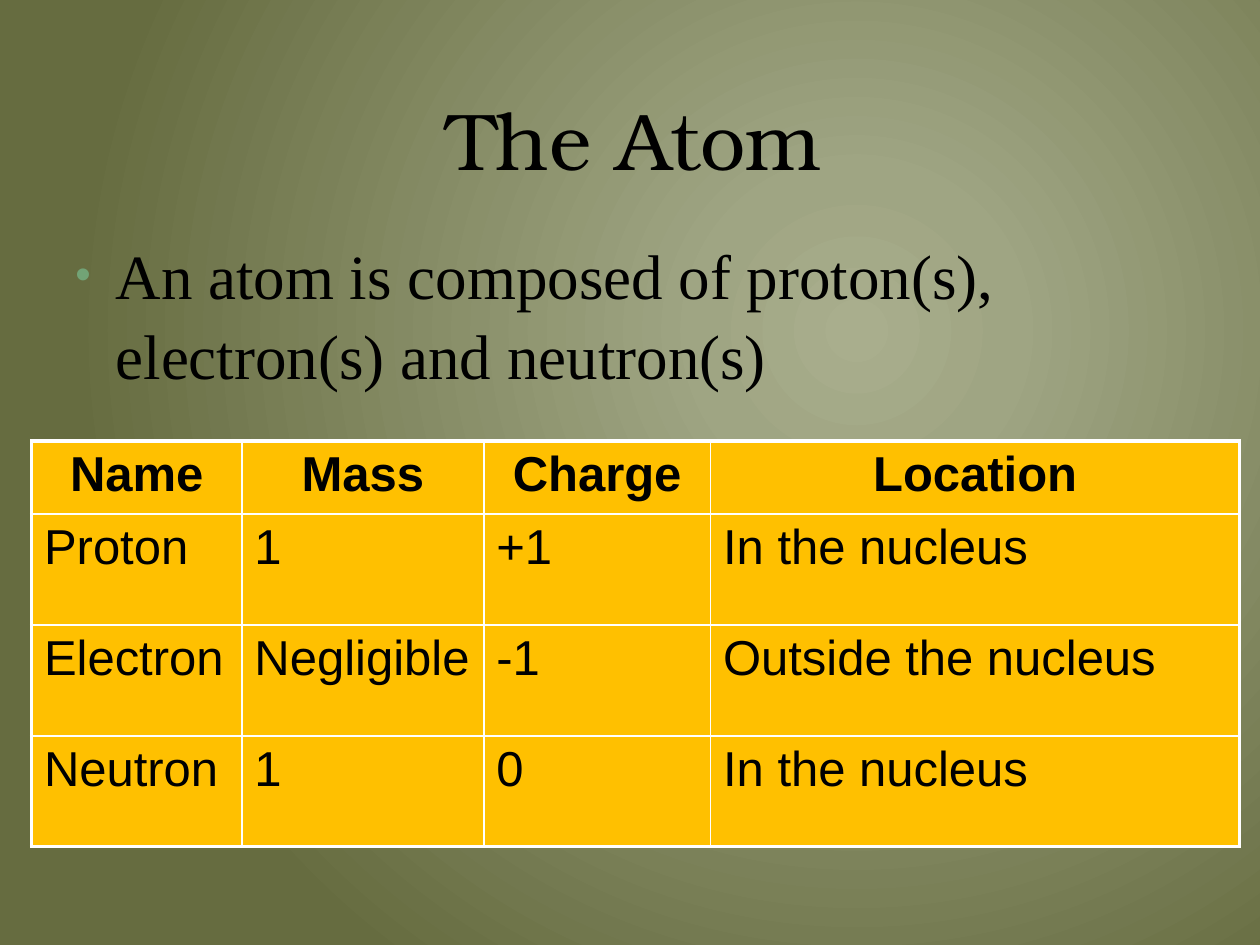
import pptx
import pptx.dml.color
import pptx.enum.text
import pptx.oxml
import pptx.oxml.ns
import pptx.util
from dataclasses import dataclass
from lxml import etree

A = pptx.oxml.ns.nsdecls("a")
ALIGN = pptx.enum.text.PP_ALIGN
ANCHOR = pptx.enum.text.MSO_ANCHOR


@dataclass(frozen=True)
class Theme:
    ink: str = "000000"
    bullet: str = "72A376"
    cell: str = "FFC000"
    rule: str = "FFFFFF"
    backdrop: tuple = ((0, "A9AE8D"), (20, "9FA583"), (100, "666C40"))
    focus: tuple = (("l", 68), ("t", 35), ("r", 32), ("b", 65))
    title: tuple = ("TeX Gyre Bonum", 46)
    body: tuple = ("Times New Roman", 36)
    table: tuple = ("Arial", 28)
    outer: float = 2.25
    inner: float = 1


T = Theme()
WIDTH, HEIGHT = 10, 7.5
TITLE_BOX = (0.5, 0.28, 9, 1.25)
BODY_BOX = (0.5, 1.8, 9, 1.5)
TABLE_BOX = (0.25, 3.5, 9.59, 3.22)
COLUMNS = (1.67, 1.92, 1.8, 4.2)
ROWS = (0.58, 0.88, 0.88, 0.88)
PARTICLES = (
    ("Name", "Mass", "Charge", "Location"),
    ("Proton", "1", "+1", "In the nucleus"),
    ("Electron", "Negligible", "-1", "Outside the nucleus"),
    ("Neutron", "1", "0", "In the nucleus"),
)


def inches(values):
    return [pptx.util.Inches(v) for v in values]


def rgb(value):
    return pptx.dml.color.RGBColor.from_string(value)


def set_all(obj, formats):
    for name, value in formats.items():
        setattr(obj, name, value)


def write(tf, text, font, align=ALIGN.LEFT, bold=False):
    p = tf.paragraphs[0]
    p.alignment = align
    r = p.add_run()
    r.text = text
    name, size = font
    set_all(r.font, {"name": name, "size": pptx.util.Pt(size), "bold": bold})
    r.font.color.rgb = rgb(T.ink)
    return p


def add_text(s, box, text, font, align, anchor):
    tf = s.shapes.add_textbox(*inches(box)).text_frame
    set_all(tf, {"word_wrap": True, "vertical_anchor": anchor})
    return write(tf, text, font, align)


def add_background(s):
    stops = "".join(f'<a:gs pos="{pos * 1000}"><a:srgbClr val="{c}"/></a:gs>'
                    for pos, c in T.backdrop)
    focus = " ".join(f'{side}="{share * 1000}"' for side, share in T.focus)
    s.background.fill.solid()
    bg_pr = s.element.cSld.find(".//" + pptx.oxml.ns.qn("p:bgPr"))
    bg_pr.replace(bg_pr[0], pptx.oxml.parse_xml(
        f'<a:gradFill {A} rotWithShape="1"><a:gsLst>{stops}</a:gsLst>'
        f'<a:path path="circle"><a:fillToRect {focus}/></a:path></a:gradFill>'))


def add_title(s, box):
    p = add_text(s, box, "The Atom", T.title, ALIGN.CENTER, ANCHOR.BOTTOM)
    p._p.get_or_add_pPr().set("marL", str(pptx.util.Inches(0.06)))


def add_body(s, box):
    p = add_text(s, box, "An atom is composed of proton(s), electron(s) and neutron(s)",
                 T.body, ALIGN.LEFT, ANCHOR.TOP)
    set_all(p, {"line_spacing": 1.05, "space_before": pptx.util.Pt(3)})
    p_pr = p._p.get_or_add_pPr()
    hang = pptx.util.Inches(0.32)
    p_pr.set("marL", str(hang))
    p_pr.set("indent", str(-hang))
    for part in (f'<a:buClr {A}><a:srgbClr val="{T.bullet}"/></a:buClr>',
                 f'<a:buSzPct {A} val="70000"/>',
                 f'<a:buFont {A} typeface="Arial"/>',
                 f'<a:buChar {A} char="•"/>'):
        p_pr.append(etree.fromstring(part))


def add_borders(cell, outer_sides):
    tc_pr = cell._tc.get_or_add_tcPr()
    for i, (side, is_outer) in enumerate(outer_sides.items()):
        width = pptx.util.Pt(T.outer if is_outer else T.inner)
        # Borders come before the fill in the cell's properties
        tc_pr.insert(i, pptx.oxml.parse_xml(
            f'<a:ln{side} {A} w="{width}"><a:solidFill><a:srgbClr val="{T.rule}"/>'
            f'</a:solidFill><a:prstDash val="solid"/></a:ln{side}>'))


def add_particle_table(s, box):
    n_rows, n_cols = len(ROWS), len(COLUMNS)
    table = s.shapes.add_table(n_rows, n_cols, *inches(box)).table
    for col, share in zip(table.columns, COLUMNS):
        col.width = pptx.util.Inches(box[2] * share / sum(COLUMNS))
    for row, share in zip(table.rows, ROWS):
        row.height = pptx.util.Inches(box[3] * share / sum(ROWS))
    for i, texts in enumerate(PARTICLES):
        header = i == 0
        for j, text in enumerate(texts):
            cell = table.cell(i, j)
            cell.fill.solid()
            cell.fill.fore_color.rgb = rgb(T.cell)
            write(cell.text_frame, text, T.table,
                  ALIGN.CENTER if header else ALIGN.LEFT, header)
            add_borders(cell, {"L": j == 0, "R": j == n_cols - 1,
                               "T": header, "B": i == n_rows - 1})


def main():
    prs = pptx.Presentation()
    set_all(prs, {"slide_width": pptx.util.Inches(WIDTH),
                  "slide_height": pptx.util.Inches(HEIGHT)})
    s = prs.slides.add_slide(prs.slide_layouts[6])
    add_background(s)
    add_title(s, TITLE_BOX)
    add_body(s, BODY_BOX)
    add_particle_table(s, TABLE_BOX)
    prs.save("out.pptx")


if __name__ == "__main__":
    main()
